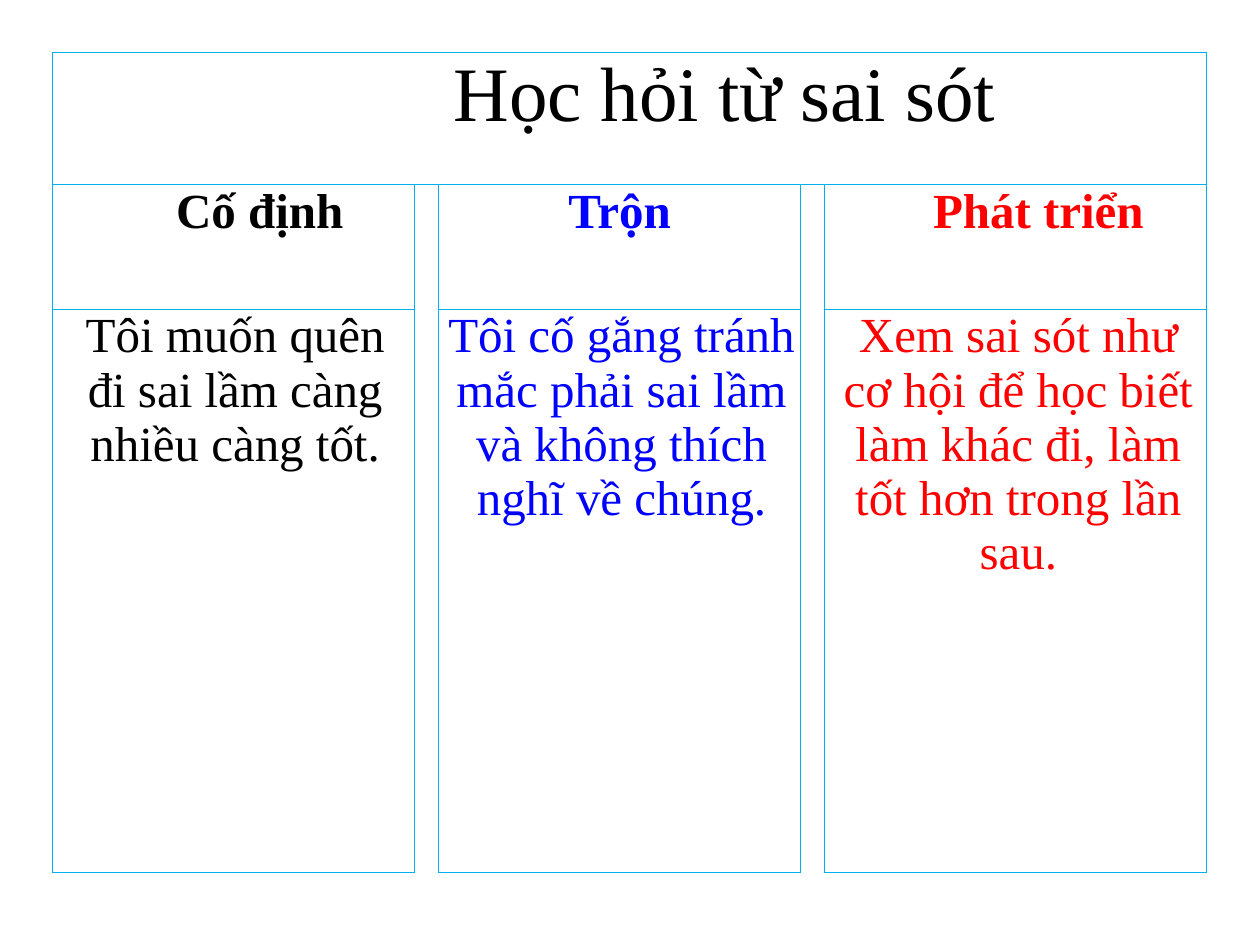
"""Build a slide with a table comparing three attitudes to learning from mistakes."""
import pptx
import pptx.dml.color
import pptx.enum.text
import pptx.oxml
import pptx.oxml.ns
import pptx.util

Pt = pptx.util.Pt
RGBColor = pptx.dml.color.RGBColor
qn = pptx.oxml.ns.qn

BLACK = RGBColor(0, 0, 0)
BLUE = RGBColor(0, 0, 255)
RED = RGBColor(255, 0, 0)
BORDER = RGBColor(0x00, 0xAF, 0xEF)
NO_STYLE = "{2D5ABB26-0587-4C30-8999-92F81FD0307C}"
COLUMN_WIDTHS = [206.6, 14.2, 206.6, 13.9, 218.4]
ROW_HEIGHTS = [75.6, 71.2, 321.8]


def draw_borders(cell, sides):
    """Draw thin lines on the given sides of a cell."""
    for side in sides:
        line = pptx.oxml.parse_xml(
            f'<a:ln{side} xmlns:a="http://schemas.openxmlformats.org/drawingml/2006/main" '
            f'w="{Pt(0.5)}"><a:solidFill><a:srgbClr val="{BORDER}"/></a:solidFill></a:ln{side}>')
        cell._tc.get_or_add_tcPr().append(line)


def write_cell(cell, text, color, size, bold, indent, space_before, right=0):
    """Write one centred paragraph into a cell."""
    paragraph = cell.text_frame.paragraphs[0]
    paragraph.text = text
    paragraph.alignment = pptx.enum.text.PP_ALIGN.CENTER
    paragraph.space_before = Pt(space_before)
    paragraph._p.get_or_add_pPr().set("marL", str(Pt(indent)))
    cell.margin_right = Pt(right)
    font_format = {"name": "Times New Roman", "size": Pt(size), "bold": bold}
    for run in paragraph.runs:
        for attribute, value in font_format.items():
            setattr(run.font, attribute, value)
        run.font.color.rgb = color


presentation = pptx.Presentation()
presentation.slide_width = Pt(720)
presentation.slide_height = Pt(540)
slide = presentation.slides.add_slide(presentation.slide_layouts[6])

frame = slide.shapes.add_table(
    len(ROW_HEIGHTS), len(COLUMN_WIDTHS), Pt(30), Pt(30),
    Pt(sum(COLUMN_WIDTHS)), Pt(sum(ROW_HEIGHTS)))
mindsets = frame.table
mindsets.first_row = False
mindsets.horz_banding = False
mindsets._tbl.tblPr.find(qn("a:tableStyleId")).text = NO_STYLE

for column, width in zip(mindsets.columns, COLUMN_WIDTHS):
    column.width = Pt(width)
for row, height in zip(mindsets.rows, ROW_HEIGHTS):
    row.height = Pt(height)

for row_index in range(len(ROW_HEIGHTS)):
    for column_index in range(len(COLUMN_WIDTHS)):
        cell = mindsets.cell(row_index, column_index)
        for margin in ("left", "right", "top", "bottom"):
            setattr(cell, f"margin_{margin}", Pt(0))
        is_gap = row_index > 0 and column_index in (1, 3)
        gap_sides = "LRT" if row_index == 1 else "LR"
        draw_borders(cell, gap_sides if is_gap else "LRTB")
        cell.fill.background()

mindsets.cell(0, 0).merge(mindsets.cell(0, 4))
for gap in (1, 3):
    mindsets.cell(1, gap).merge(mindsets.cell(2, gap))

write_cell(mindsets.cell(0, 0), "Học hỏi từ sai sót", BLACK, 44, False, 108.7, 0)

attitudes = [
    (0, BLACK, "Cố định", 30.2, 0.1,
     "Tôi muốn quên\vđi sai lầm càng\vnhiều càng tốt.", 1.4, 1.4),
    (2, BLUE, "Trộn", 0, 0.1,
     "Tôi cố gắng tránh\vmắc phải sai lầm\vvà không thích\vnghĩ về chúng.", 1.6, 1.4),
    (4, RED, "Phát triển", 25.9, 0,
     "Xem sai sót như\vcơ hội để học biết\vlàm khác đi, làm\vtốt hơn trong lần\vsau.", 0.4, 0.7),
]
for column_index, color, heading, indent, heading_space, belief, belief_space, right in attitudes:
    write_cell(mindsets.cell(1, column_index), heading, color, 28, True, indent, heading_space)
    write_cell(mindsets.cell(2, column_index), belief, color, 28, False, 3.6, belief_space, right)

presentation.save("out.pptx")
